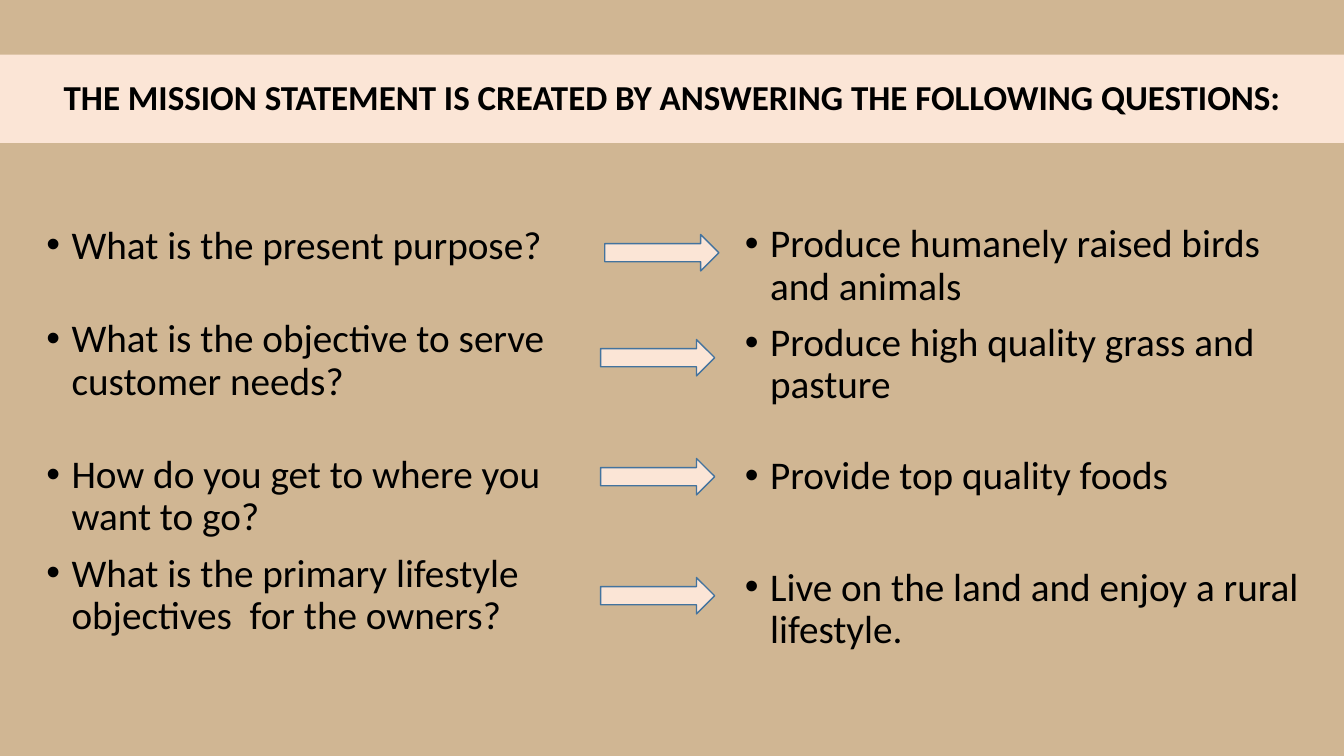
import dataclasses

import pptx
import pptx.dml.color
import pptx.enum.shapes
import pptx.enum.text
import pptx.oxml
import pptx.oxml.ns
import pptx.util

Pt = pptx.util.Pt


@dataclasses.dataclass(frozen=True)
class Theme:
    background: str = "D0B693"
    accent: str = "FBE5D6"
    outline: str = "43739E"
    text: str = "000000"
    font: str = "Calibri"
    title_size: float = 25
    body_size: float = 28
    line_spacing: float = 0.9
    space_before: float = 10
    bullet_indent: float = 18


def color(value):
    return pptx.dml.color.RGBColor.from_string(value)


def apply_format(target, values):
    for name, value in values.items():
        setattr(target, name, value)


def place(shape, left, top, width, height):
    apply_format(shape, {"left": Pt(left), "top": Pt(top),
                         "width": Pt(width), "height": Pt(height)})


class SlideBuilder:
    def __init__(self, slide, theme):
        self.slide = slide
        self.theme = theme
        self.fill(slide.background, theme.background)

    def fill(self, part, value):
        part.fill.solid()
        part.fill.fore_color.rgb = color(value)

    def add_text(self, paragraph, text, size, bold=False):
        run = paragraph.add_run()
        run.text = text
        apply_format(run.font, {"name": self.theme.font, "size": Pt(size), "bold": bold})
        run.font.color.rgb = color(self.theme.text)

    def title(self, text, *box):
        banner = self.slide.shapes.title
        place(banner, *box)
        self.fill(banner, self.theme.accent)
        apply_format(banner.text_frame, {
            "word_wrap": True,
            "auto_size": pptx.enum.text.MSO_AUTO_SIZE.NONE,
            "vertical_anchor": pptx.enum.text.MSO_ANCHOR.MIDDLE})
        heading = banner.text_frame.paragraphs[0]
        apply_format(heading, {"alignment": pptx.enum.text.PP_ALIGN.CENTER,
                               "line_spacing": self.theme.line_spacing})
        self.add_text(heading, text, self.theme.title_size, bold=True)

    def bullets(self, items, *box):
        """Each item is a pair of text and space before it."""
        frame = self.slide.shapes.add_textbox(*map(Pt, box)).text_frame
        frame.word_wrap = True
        for index, (text, space) in enumerate(items):
            item = frame.add_paragraph() if index else frame.paragraphs[0]
            apply_format(item, {"line_spacing": self.theme.line_spacing,
                                "space_before": Pt(space)})
            self.add_text(item, text, self.theme.body_size)
            self.add_bullet(item)

    def add_bullet(self, paragraph):
        indent = Pt(self.theme.bullet_indent)
        properties = paragraph._p.get_or_add_pPr()
        properties.set("marL", str(indent))
        properties.set("indent", str(-indent))
        namespace = pptx.oxml.ns.nsdecls("a")
        for mark in ('buFont {} typeface="Arial"', 'buChar {} char="•"'):
            properties.append(pptx.oxml.parse_xml(f"<a:{mark.format(namespace)}/>"))

    def arrow(self, *box):
        arrow = self.slide.shapes.add_shape(
            pptx.enum.shapes.MSO_SHAPE.RIGHT_ARROW, *map(Pt, box))
        arrow.shadow.inherit = False
        self.fill(arrow, self.theme.accent)
        arrow.line.color.rgb = color(self.theme.outline)
        arrow.line.width = Pt(1)


def main():
    theme = Theme()
    deck = pptx.Presentation()
    apply_format(deck, {"slide_width": Pt(960), "slide_height": Pt(540)})
    title_only = deck.slide_layouts.get_by_name("Title Only")
    builder = SlideBuilder(deck.slides.add_slide(title_only), theme)

    # Title banner
    builder.title("THE MISSION STATEMENT IS CREATED BY ANSWERING THE FOLLOWING QUESTIONS:",
                  0, 39, 960, 63)

    # Questions on the left, answers on the right
    questions = [
        ("What is the present purpose?", theme.space_before),
        ("What is the objective to serve customer needs?", 36.5),
        ("How do you get to where you want to go?", 36.5),
        ("What is the primary lifestyle objectives  for the owners?", theme.space_before),
    ]
    answers = [
        ("Produce humanely raised birds and animals", theme.space_before),
        ("Produce high quality grass and pasture", theme.space_before),
        ("Provide top quality foods", 34.5),
        ("Live on the land and enjoy a rural lifestyle.", 49.5),
    ]
    builder.bullets(questions, 26, 157.5, 406, 319)
    builder.bullets(answers, 525, 156.5, 422, 310)

    # Arrows from question to answer: the first sits apart, the rest are evenly spaced
    arrow_corners = [(432, 167.5)] + [(429, 242.5 + 85 * row) for row in range(3)]
    for left, top in arrow_corners:
        builder.arrow(left, top, 81.5, 26)

    deck.save("out.pptx")


if __name__ == "__main__":
    main()
